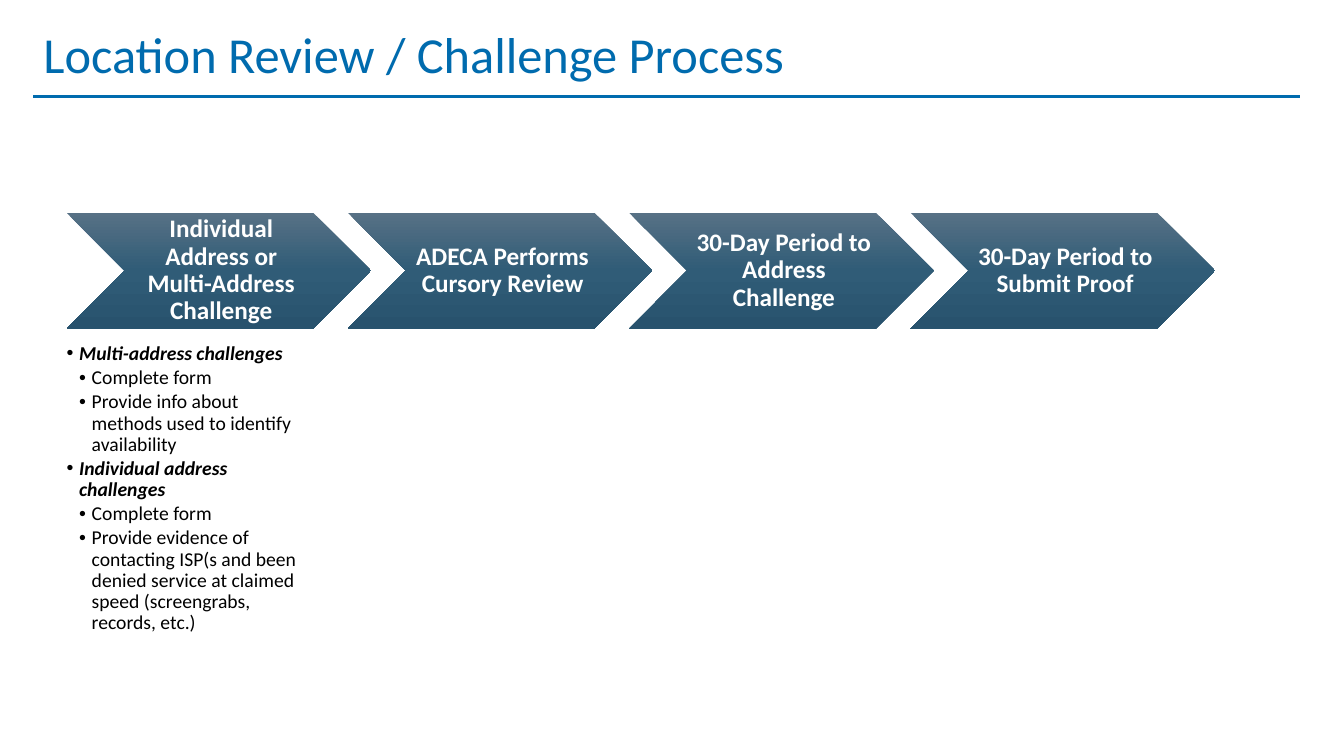
from copy import deepcopy

from lxml.etree import SubElement
from pptx import Presentation
from pptx.dml.color import RGBColor
from pptx.enum.shapes import MSO_CONNECTOR, MSO_SHAPE
from pptx.enum.text import MSO_ANCHOR as Anchor, MSO_AUTO_SIZE as AutoSize, PP_ALIGN as Align
from pptx.oxml.ns import qn
from pptx.util import Inches, Pt

STEPS = [
    "Individual Address or Multi-Address Challenge",
    "ADECA Performs Cursory Review",
    "30-Day Period to Address Challenge",
    "30-Day Period to Submit Proof",
]
REQUIREMENTS = [
    (1, "Multi-address challenges"),
    (2, "Complete form"),
    (2, "Provide info about methods used to identify availability"),
    (1, "Individual address challenges"),
    (2, "Complete form"),
    (2, "Provide evidence of contacting ISP(s and been denied service at claimed "
        "speed (screengrabs, records, etc.)"),
]


def color(hex_value):
    return RGBColor.from_string(hex_value)


def apply(target, formats):
    for name, value in formats.items():
        setattr(target, name, value)


class ProcessSlide:
    font = "Calibri"
    accent = "006BAE"
    gradient = [(0, "577185"), (0.5, "305C77"), (1, "28526D")]

    def __init__(self, deck):
        self.slide = deck.slides.add_slide(deck.slide_layouts[1])

    def place(self, shape, left, top, width, height):
        apply(shape, {"left": Inches(left), "top": Inches(top),
                      "width": Inches(width), "height": Inches(height)})

    def frame(self, shape, anchor, insets):
        frame = shape.text_frame
        apply(frame, {"word_wrap": True, "auto_size": AutoSize.NONE, "vertical_anchor": anchor})
        sides = ("margin_left", "margin_top", "margin_right", "margin_bottom")
        apply(frame, dict(zip(sides, map(Inches, insets))))
        return frame

    def fill_in(self, paragraph, text, size, hex_value, align=Align.LEFT, after=0, **emphasis):
        apply(paragraph, {"alignment": align, "line_spacing": 0.9,
                          "space_before": Pt(0), "space_after": Pt(after)})
        run = paragraph.add_run()
        run.text = text
        apply(run.font, {"name": self.font, "size": Pt(size), **emphasis})
        run.font.color.rgb = color(hex_value)

    def title(self, text):
        heading = self.slide.shapes.title
        self.place(heading, 0.33, 0.25, 11.5, 1.45)
        frame = self.frame(heading, Anchor.TOP, (0.1, 0.05, 0.1, 0.05))
        self.fill_in(frame.paragraphs[0], text, 36, self.accent)

    def rule(self, left, right, top):
        rule = self.slide.shapes.add_connector(
            MSO_CONNECTOR.STRAIGHT, Inches(left), Inches(top), Inches(right), Inches(top))
        rule.line.color.rgb = color(self.accent)
        rule.line.width = Pt(2.25)
        SubElement(rule._element.spPr, qn("a:effectLst"))

    def step(self, text, left, top, width, height):
        chevron = self.slide.shapes.add_shape(
            MSO_SHAPE.CHEVRON, Inches(left), Inches(top), Inches(width), Inches(height))
        chevron.shadow.inherit = False
        chevron.line.fill.background()
        chevron.fill.gradient()
        chevron.fill.gradient_angle = 270
        stops = chevron._element.spPr.find(".//" + qn("a:gsLst"))
        stops.append(deepcopy(stops[0]))
        for stop, (position, hex_value) in zip(chevron.fill.gradient_stops, self.gradient):
            stop.position = position
            stop.color.rgb = color(hex_value)
        frame = self.frame(chevron, Anchor.MIDDLE, (0.08, 0.03, 0.03, 0.03))
        self.fill_in(frame.paragraphs[0], text, 18, "FFFFFF", Align.CENTER, bold=True)

    def bullets(self, items, left, top, width, height):
        body = self.slide.placeholders[1]
        self.place(body, left, top, width, height)
        frame = self.frame(body, Anchor.TOP, (0, 0, 0, 0))
        for index, (level, text) in enumerate(items):
            paragraph = frame.add_paragraph() if index else frame.paragraphs[0]
            paragraph.level = level
            heading = level == 1
            self.fill_in(paragraph, text, 14, "000000", after=2.1, bold=heading, italic=heading)
            properties = paragraph._p.get_or_add_pPr()
            properties.set("marL", str(Inches(0.125 * level)))
            properties.set("indent", str(Inches(-0.125)))
            SubElement(properties, qn("a:buChar"), char="•")


def main():
    deck = Presentation()
    apply(deck, {"slide_width": Inches(13.33), "slide_height": Inches(7.5)})
    process = ProcessSlide(deck)
    process.rule(0.33, 12.89, 0.96)
    process.title("Location Review / Challenge Process")
    for index, text in enumerate(STEPS):
        process.step(text, 0.66 + 2.79 * index, 2.11, 3.02, 1.15)
    process.bullets(REQUIREMENTS, 0.66, 3.41, 2.42, 3.01)
    deck.save("out.pptx")


if __name__ == "__main__":
    main()
